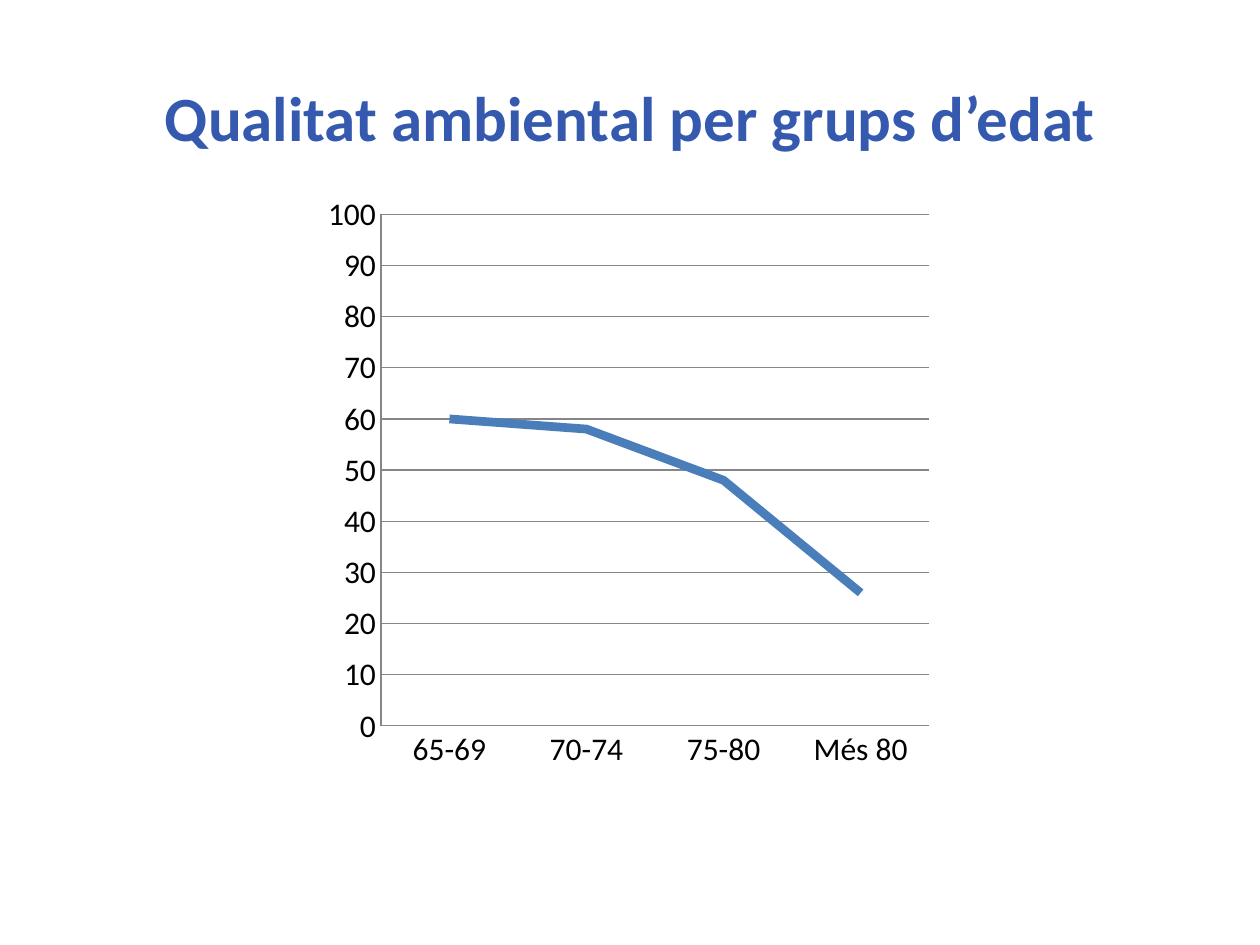
from lxml import etree
from pptx import Presentation
from pptx.chart import data
from pptx.dml.color import RGBColor
from pptx.enum import chart as ch, text
from pptx.oxml import ns
from pptx.util import Pt

TITLE_BLUE = RGBColor(0x34, 0x59, 0xAE)
LINE_BLUE = RGBColor(0x4A, 0x7E, 0xBB)
AXIS_GREY = RGBColor(0x86, 0x86, 0x86)
BLACK = RGBColor(0, 0, 0)
FONT = "Calibri"

presentation = Presentation()
presentation.slide_width, presentation.slide_height = Pt(720), Pt(540)
slide = presentation.slides.add_slide(presentation.slide_layouts[6])

# Title
title = slide.shapes.add_textbox(Pt(36), Pt(21.6), Pt(648), Pt(90))
title.text_frame.word_wrap = True
title.text_frame.vertical_anchor = text.MSO_ANCHOR.MIDDLE
paragraph = title.text_frame.paragraphs[0]
paragraph.alignment = text.PP_ALIGN.CENTER
run = paragraph.add_run()
run.text = "Qualitat ambiental per grups d’edat"
run.font.name, run.font.size, run.font.bold = FONT, Pt(36), True
run.font.color.rgb = TITLE_BLUE

# Line chart of quality by age group
chart_data = data.CategoryChartData()
chart_data.categories = ["65-69", "70-74", "75-80", "Més 80"]
chart_data.add_series("Series 1", [60, 58, 48, 26])
chart = slide.shapes.add_chart(
    ch.XL_CHART_TYPE.LINE, Pt(169.2), Pt(111.6), Pt(373), Pt(348.5), chart_data
).chart
chart.has_title = False
chart.has_legend = False
chart.font.name, chart.font.size = FONT, Pt(18)
chart.font.color.rgb = BLACK

plot = chart.plots[0]
plot.vary_by_categories = False
series = plot.series[0]
series.smooth = False
series.marker.style = ch.XL_MARKER_STYLE.NONE
series.format.line.color.rgb = LINE_BLUE
series.format.line.width = Pt(5)

# Axes and gridlines
value_axis = chart.value_axis
value_axis.minimum_scale, value_axis.maximum_scale = 0, 100
value_axis.major_unit = 10
value_axis.has_major_gridlines = True
for axis in (chart.category_axis, value_axis):
    axis.major_tick_mark = ch.XL_TICK_MARK.NONE
    axis.minor_tick_mark = ch.XL_TICK_MARK.NONE
for part in (chart.category_axis, value_axis, value_axis.major_gridlines):
    part.format.line.color.rgb = AXIS_GREY
    part.format.line.width = Pt(0.75)

# Fixed inner plot area, as fractions of the chart
plot_area = plot._element.getparent()
for old_layout in plot_area.findall(ns.qn("c:layout")):
    plot_area.remove(old_layout)
layout = etree.Element(ns.qn("c:layout"))
manual = etree.SubElement(layout, ns.qn("c:manualLayout"))
for tag, value in (
    ("layoutTarget", "inner"), ("xMode", "edge"), ("yMode", "edge"),
    ("x", "0.13"), ("y", "0.03"), ("w", "0.84"), ("h", "0.84"),
):
    etree.SubElement(manual, ns.qn("c:" + tag)).set("val", value)
plot_area.insert(0, layout)

presentation.save("out.pptx")
